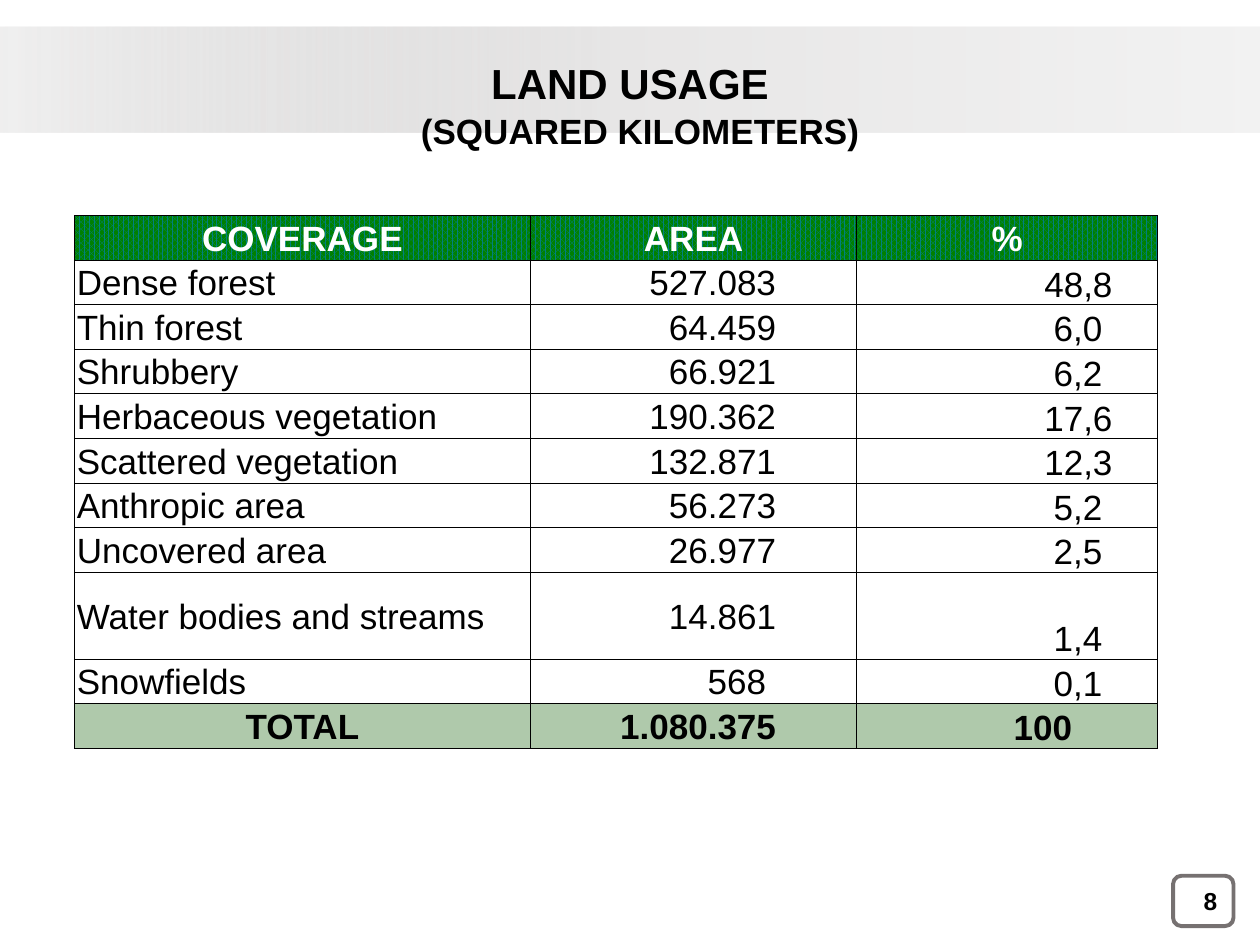
from dataclasses import dataclass

import lxml.etree
import pptx
import pptx.dml.color
import pptx.enum.dml
import pptx.enum.shapes
import pptx.enum.text
import pptx.oxml
import pptx.oxml.ns
import pptx.util

RGBColor = pptx.dml.color.RGBColor
Inches = pptx.util.Inches
Pt = pptx.util.Pt
Align = pptx.enum.text.PP_ALIGN
Anchor = pptx.enum.text.MSO_ANCHOR
ShapeKind = pptx.enum.shapes.MSO_SHAPE

FONT = "Arial"
BLACK = RGBColor(0x00, 0x00, 0x00)
WHITE = RGBColor(0xFF, 0xFF, 0xFF)
FRAME_GRAY = RGBColor(0x76, 0x71, 0x71)
HEADER_GREEN = RGBColor(0x00, 0x80, 0x00)
HEADER_TEAL = RGBColor(0x00, 0x80, 0x80)
TOTAL_GREEN = RGBColor(0xAF, 0xC9, 0xAB)

SLIDE_WIDTH, SLIDE_HEIGHT = Inches(10), Inches(7.5)
COLUMN_WIDTHS = (3.62, 2.59, 2.39)
ROW_HEIGHT, TALL_ROW_HEIGHT = 0.354, 0.69
CELL_INSET = 0.02


@dataclass(frozen=True)
class Area:
    """Place on the slide, in percent of its width and height."""
    left: float
    top: float
    width: float
    height: float

    def lengths(self) -> tuple:
        return (int(SLIDE_WIDTH * self.left / 100), int(SLIDE_HEIGHT * self.top / 100),
                int(SLIDE_WIDTH * self.width / 100), int(SLIDE_HEIGHT * self.height / 100))


@dataclass(frozen=True)
class Label:
    text: str
    area: Area
    size: int
    align: Align
    anchor: Anchor = Anchor.TOP


@dataclass(frozen=True)
class Coverage:
    """One table row; the insets place the right edge of each figure."""
    name: str
    area: str
    share: str
    area_inset: float = 0.64
    share_inset: float = 0.44
    height: float = ROW_HEIGHT


LABELS = (
    Label("LAND USAGE", Area(8.1, 5.47, 83.8, 6.67), 24, Align.CENTER),
    Label("8", Area(75.1, 92.67, 22.5, 5.33), 14, Align.RIGHT, Anchor.MIDDLE),
    Label("(SQUARED KILOMETERS)", Area(5.9, 10.93, 89.8, 5.87), 20, Align.CENTER),
)
HEADINGS = ("COVERAGE", "AREA", "%")
COVERAGES = (
    Coverage("Dense forest", "527.083", "48,8", share_inset=0.36),
    Coverage("Thin forest", "64.459", "6,0"),
    Coverage("Shrubbery", "66.921", "6,2"),
    Coverage("Herbaceous vegetation", "190.362", "17,6", share_inset=0.36),
    Coverage("Scattered vegetation", "132.871", "12,3", share_inset=0.36),
    Coverage("Anthropic area", "56.273", "5,2"),
    Coverage("Uncovered area", "26.977", "2,5"),
    Coverage("Water bodies and streams", "14.861", "1,4", height=TALL_ROW_HEIGHT),
    Coverage("Snowfields", "568", "0,1", area_inset=0.72),
)
TOTAL = Coverage("TOTAL", "1.080.375", "100", share_inset=0.68)


def write(paragraph, text: str, size: int, align: Align,
          color: RGBColor = BLACK, bold: bool = True) -> None:
    paragraph.alignment = align
    run = paragraph.add_run()
    run.text = text
    run.font.name, run.font.size, run.font.bold = FONT, Pt(size), bold
    run.font.color.rgb = color


def add_label(slide, label: Label) -> None:
    frame = slide.shapes.add_textbox(*label.area.lengths()).text_frame
    frame.word_wrap = True
    frame.vertical_anchor = label.anchor
    write(frame.paragraphs[0], label.text, label.size, label.align)


def add_band(slide, area: Area) -> None:
    band = slide.shapes.add_shape(ShapeKind.RECTANGLE, *area.lengths())
    band.shadow.inherit = False
    band.line.fill.background()
    band.fill.gradient()
    band.fill.gradient_angle = 0
    stops = band.fill._fill._gradFill.find(pptx.oxml.ns.qn("a:gsLst"))
    for stop in list(stops):
        stops.remove(stop)
    for position, color, opacity in ((0, "C3C2C2", 25), (49, "E7E6E6", 100),
                                     (100, "F2F2F2", 100)):
        stops.append(pptx.oxml.parse_xml(
            f'<a:gs {pptx.oxml.ns.nsdecls("a")} pos="{position * 1000}">'
            f'<a:srgbClr val="{color}"><a:alpha val="{opacity * 1000}"/></a:srgbClr></a:gs>'))


def add_number_frame(slide, area: Area) -> None:
    frame = slide.shapes.add_shape(ShapeKind.ROUNDED_RECTANGLE, *area.lengths())
    frame.shadow.inherit = False
    frame.fill.background()
    frame.line.color.rgb = FRAME_GRAY
    frame.line.width = Pt(2.25)


def add_borders(cell) -> None:
    properties = cell._tc.get_or_add_tcPr()
    for side in ("lnL", "lnR", "lnT", "lnB"):
        properties.append(pptx.oxml.parse_xml(
            f'<a:{side} {pptx.oxml.ns.nsdecls("a")} w="{Pt(0.5)}"><a:solidFill>'
            f'<a:srgbClr val="{BLACK}"/></a:solidFill></a:{side}>'))


def fill_cell(cell, text: str, align: Align, fill: RGBColor = None,
              color: RGBColor = BLACK, bold: bool = False,
              right_inset: float = CELL_INSET, anchor: Anchor = Anchor.MIDDLE) -> None:
    """Without a fill colour the cell gets the dotted header pattern."""
    add_borders(cell)
    if fill is None:
        cell.fill.patterned()
        cell.fill.pattern = pptx.enum.dml.MSO_PATTERN.PERCENT_75
        cell.fill.fore_color.rgb = HEADER_TEAL
        cell.fill.back_color.rgb = HEADER_GREEN
    else:
        cell.fill.solid()
        cell.fill.fore_color.rgb = fill
    cell.margin_left = cell.margin_top = Inches(CELL_INSET)
    cell.margin_right, cell.margin_bottom = Inches(right_inset), 0
    cell.vertical_anchor = anchor
    write(cell.text_frame.paragraphs[0], text, 20, align, color, bold)


def add_land_table(slide, area: Area) -> None:
    rows = (*COVERAGES, TOTAL)
    table = slide.shapes.add_table(len(rows) + 1, len(HEADINGS), *area.lengths()).table
    table.first_row = table.horz_banding = False
    for column, width in zip(table.columns, COLUMN_WIDTHS):
        column.width = Inches(width)
    table.rows[0].height = Inches(ROW_HEIGHT)
    for index, heading in enumerate(HEADINGS):
        fill_cell(table.cell(0, index), heading, Align.CENTER, color=WHITE, bold=True)
    for index, row in enumerate(rows, start=1):
        table.rows[index].height = Inches(row.height)
        is_total = row is TOTAL
        fill = TOTAL_GREEN if is_total else WHITE
        fill_cell(table.cell(index, 0), row.name,
                  Align.CENTER if is_total else Align.LEFT, fill, bold=is_total)
        fill_cell(table.cell(index, 1), row.area, Align.RIGHT, fill,
                  bold=is_total, right_inset=row.area_inset)
        fill_cell(table.cell(index, 2), row.share, Align.RIGHT, fill, bold=is_total,
                  right_inset=row.share_inset, anchor=Anchor.BOTTOM)


def main() -> None:
    deck = pptx.Presentation()
    deck.slide_width, deck.slide_height = SLIDE_WIDTH, SLIDE_HEIGHT
    slide = deck.slides.add_slide(deck.slide_layouts[6])

    # Page frame
    add_number_frame(slide, Area(93.1, 92.67, 4.8, 5.33))
    add_band(slide, Area(0, 2.8, 100, 11.2))

    # Headings and page number
    for label in LABELS:
        add_label(slide, label)

    # Land usage figures
    add_land_table(slide, Area(5.9, 22.8, 85.9, 56.4))

    deck.save("out.pptx")


if __name__ == "__main__":
    main()
